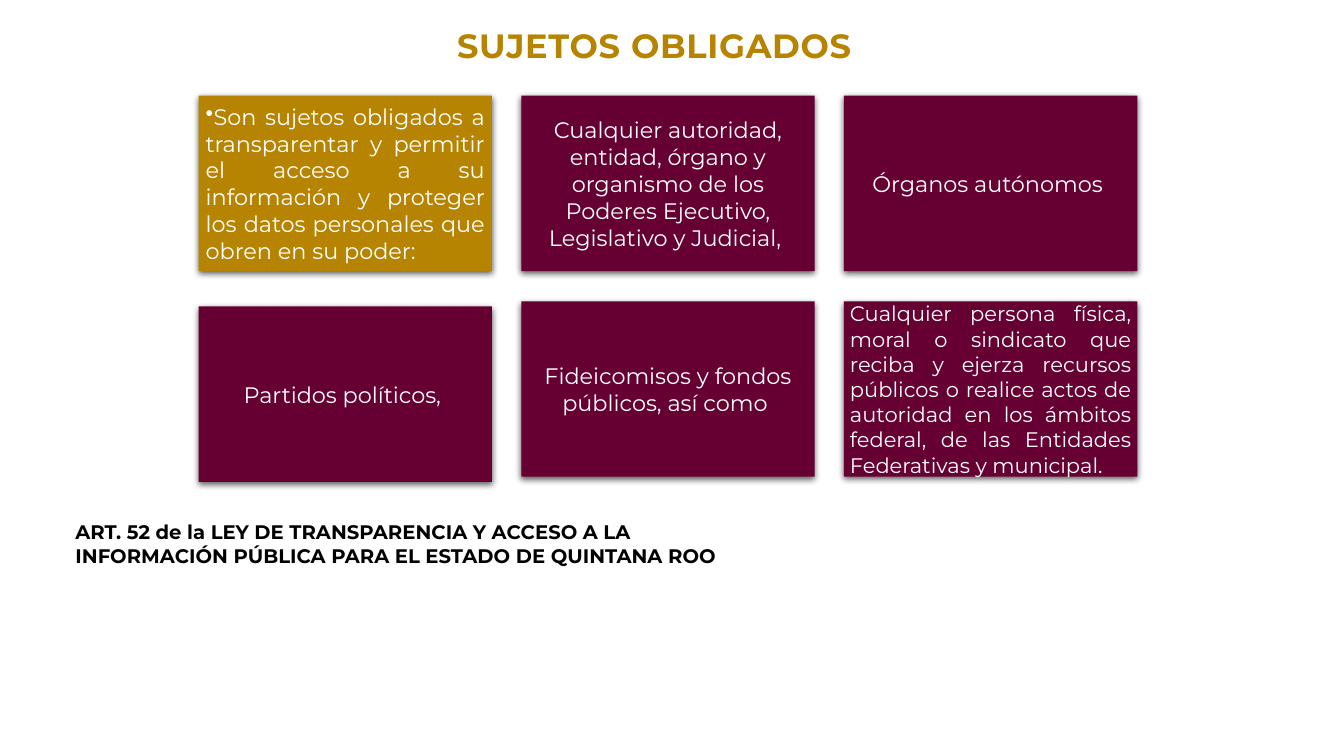
from lxml.etree import SubElement
from pptx import Presentation
from pptx.dml.color import RGBColor
from pptx.enum.shapes import MSO_SHAPE
from pptx.enum.text import MSO_ANCHOR, MSO_AUTO_SIZE, PP_ALIGN
from pptx.oxml import parse_xml
from pptx.oxml.ns import nsdecls, qn
from pptx.util import Inches, Pt

FONT = "Montserrat"
GOLD = RGBColor(0xB6, 0x84, 0x00)
WINE = RGBColor(0x66, 0x00, 0x33)
WHITE = RGBColor(0xFF, 0xFF, 0xFF)
BLACK = RGBColor(0x00, 0x00, 0x00)

CARD_W, CARD_H = 2.91, 1.74
PITCH_X, PITCH_Y = 3.2, 2.04
COLUMNS = 3

# text, fill, alignment, size, inset, vertical offset
CARDS = [
    ("Son sujetos obligados a transparentar y permitir el acceso a su "
     "información y proteger los datos personales que obren en su poder: ",
     GOLD, PP_ALIGN.JUSTIFY, 16, 0.07, 0),
    ("Cualquier autoridad, entidad, órgano y organismo de los Poderes "
     "Ejecutivo, Legislativo y Judicial, ", WINE, PP_ALIGN.CENTER, 16, 0.07, 0),
    ("Órganos autónomos ", WINE, PP_ALIGN.CENTER, 16, 0.07, 0),
    ("Partidos políticos, ", WINE, PP_ALIGN.CENTER, 16, 0.07, 0.05),
    ("Fideicomisos y fondos públicos, así como ",
     WINE, PP_ALIGN.CENTER, 16, 0.07, 0),
    ("Cualquier persona física, moral o sindicato que reciba y ejerza recursos "
     "públicos o realice actos de autoridad en los ámbitos federal, de las "
     "Entidades Federativas y municipal.", WINE, PP_ALIGN.JUSTIFY, 15, 0.06, 0),
]


def add_text(p, text, size, color, bold=False):
    r = p.add_run()
    r.text = text
    r.font.name = FONT
    r.font.size = Pt(size)
    r.font.bold = bold
    r.font.color.rgb = color
    return r


def add_drop_shadow(sp):
    sp.shadow.inherit = False
    effects = sp._element.spPr.find(qn("a:effectLst"))
    effects.append(parse_xml(
        f'<a:outerShdw {nsdecls("a")} blurRad="{Pt(4.5)}" dist="{Pt(1.5)}" '
        'dir="5400000" algn="ctr" rotWithShape="0"><a:srgbClr val="000000">'
        '<a:alpha val="63000"/></a:srgbClr></a:outerShdw>'))


def add_bullet(p):
    pPr = p._p.get_or_add_pPr()
    pPr.set("marL", "0")
    pPr.set("indent", "0")
    SubElement(pPr, qn("a:buChar")).set("char", "•")


def place_title(slide, x, y, w, h):
    title = slide.shapes.title
    title.left, title.top, title.width, title.height = map(Inches, (x, y, w, h))
    tf = title.text_frame
    tf.word_wrap = False
    tf.auto_size = MSO_AUTO_SIZE.SHAPE_TO_FIT_TEXT
    tf.vertical_anchor = MSO_ANCHOR.TOP
    p = tf.paragraphs[0]
    p.alignment = PP_ALIGN.CENTER
    r = add_text(p, "SUJETOS OBLIGADOS", 24, GOLD, bold=True)
    r.font._element.set("spc", "50")


def add_card(slide, x, y, text, fill, align, size, inset):
    sp = slide.shapes.add_shape(MSO_SHAPE.RECTANGLE, Inches(x), Inches(y),
                                Inches(CARD_W), Inches(CARD_H))
    sp.fill.solid()
    sp.fill.fore_color.rgb = fill
    sp.line.fill.background()
    add_drop_shadow(sp)
    tf = sp.text_frame
    tf.word_wrap = True
    tf.vertical_anchor = MSO_ANCHOR.MIDDLE
    tf.margin_left = tf.margin_right = Inches(inset)
    tf.margin_top = tf.margin_bottom = Inches(inset)
    p = tf.paragraphs[0]
    p.alignment = align
    add_text(p, text, size, WHITE)
    return sp


def add_card_grid(slide, x, y):
    for i, (text, fill, align, size, inset, offset) in enumerate(CARDS):
        row, col = divmod(i, COLUMNS)
        sp = add_card(slide, x + col * PITCH_X, y + row * PITCH_Y + offset,
                      text, fill, align, size, inset)
        if i == 0:
            add_bullet(sp.text_frame.paragraphs[0])


def add_legal_reference(slide, x, y, w, h):
    box = slide.shapes.add_textbox(*map(Inches, (x, y, w, h)))
    tf = box.text_frame
    tf.word_wrap = True
    tf.auto_size = MSO_AUTO_SIZE.SHAPE_TO_FIT_TEXT
    add_text(tf.paragraphs[0],
             "ART. 52 de la LEY DE TRANSPARENCIA Y ACCESO A LA INFORMACIÓN "
             "PÚBLICA PARA EL ESTADO DE QUINTANA ROO", 14, BLACK, bold=True)


def main():
    prs = Presentation()
    prs.slide_width, prs.slide_height = Inches(13.33), Inches(7.5)
    slide = prs.slides.add_slide(prs.slide_layouts.get_by_name("Title Only"))
    place_title(slide, 4.41, 0.2, 4.16, 0.5)
    add_card_grid(slide, 1.97, 0.95)
    add_legal_reference(slide, 0.65, 5.11, 6.65, 0.57)
    prs.save("out.pptx")


if __name__ == "__main__":
    main()
